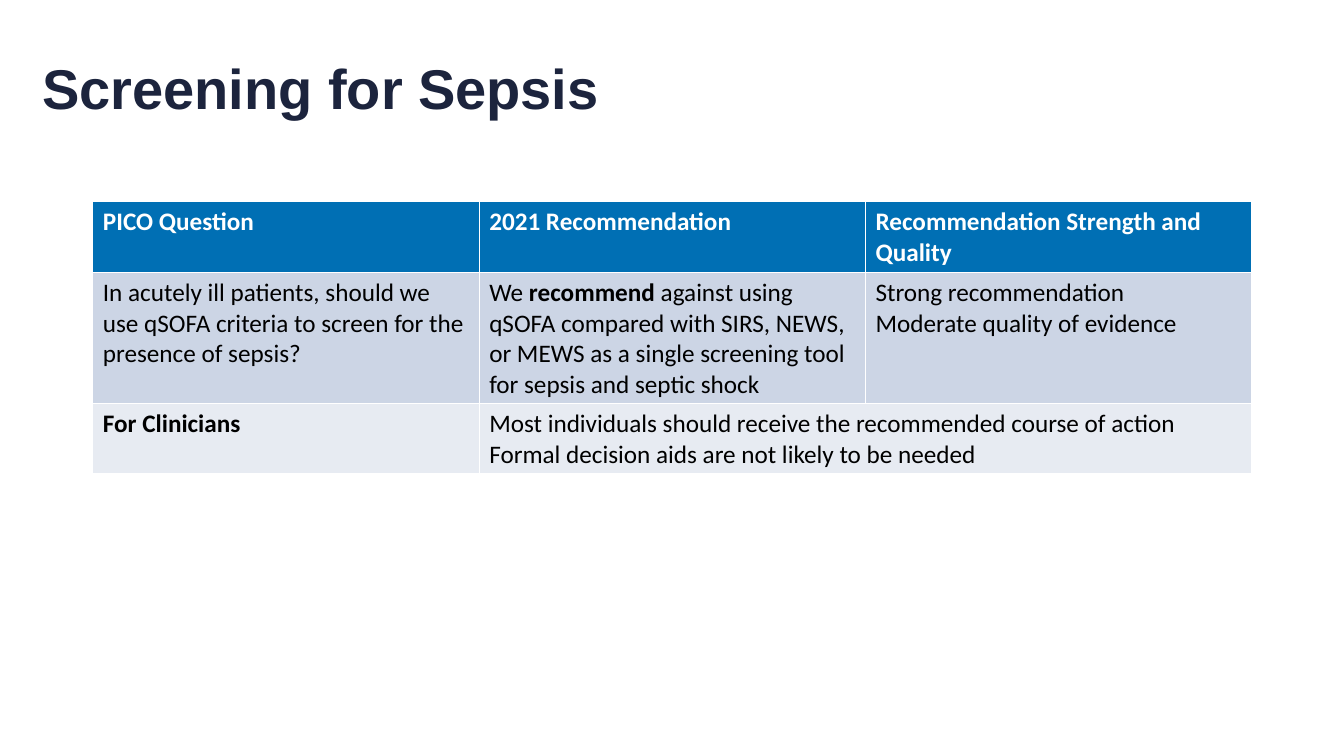
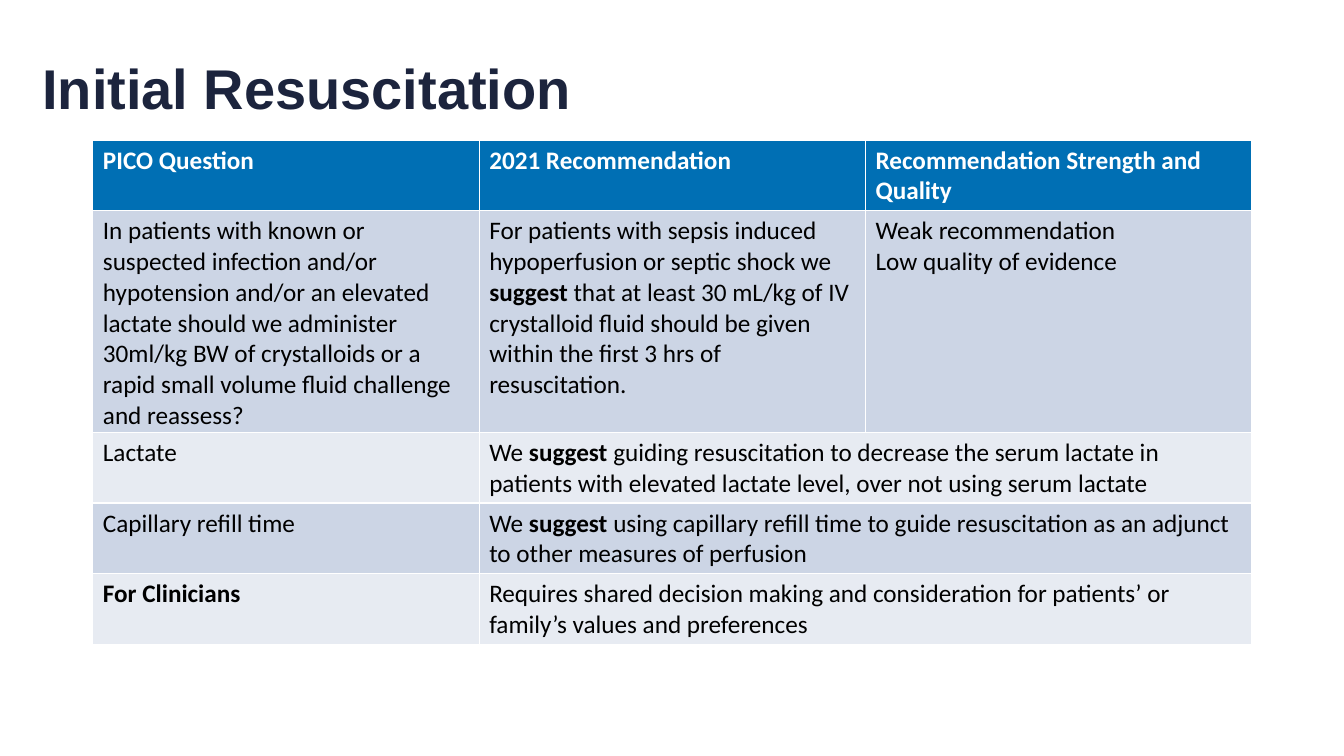
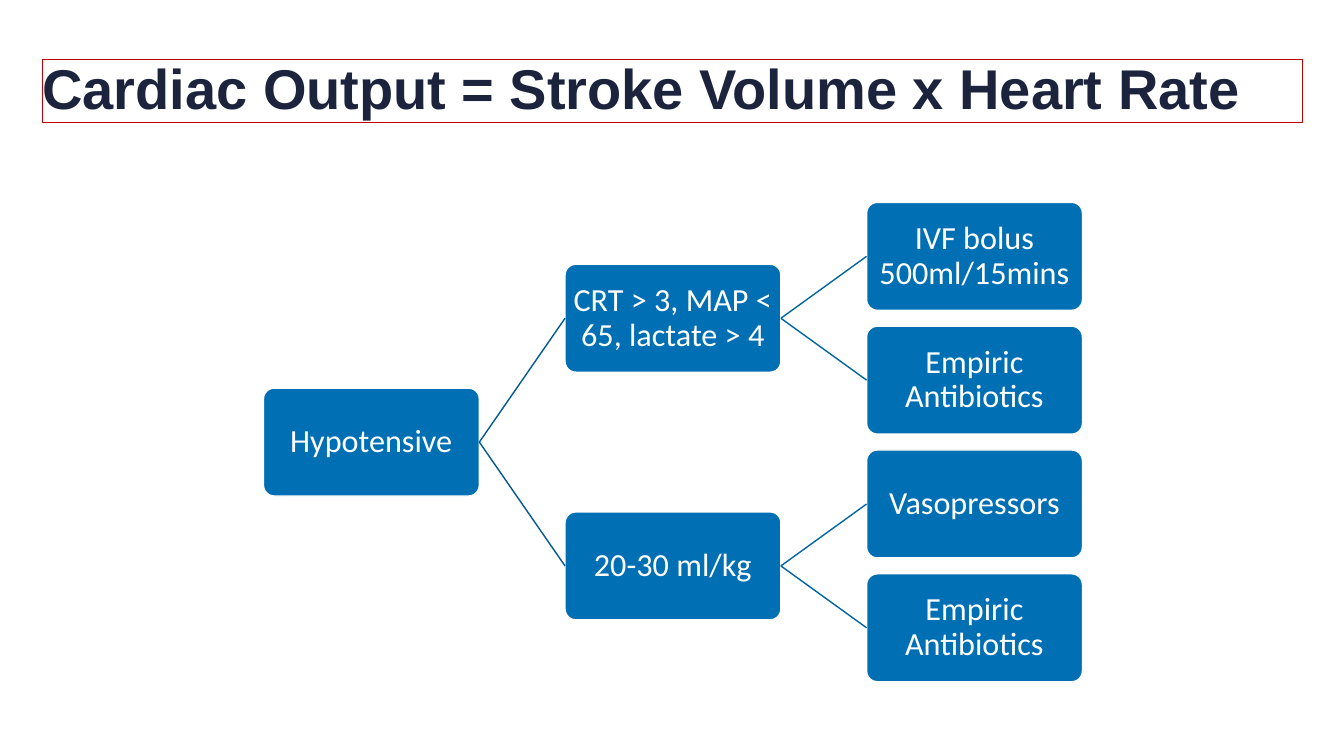
from lxml.etree import SubElement
from pptx import Presentation
from pptx.dml.color import RGBColor
from pptx.enum.shapes import MSO_CONNECTOR, MSO_SHAPE
from pptx.enum.text import MSO_ANCHOR, PP_ALIGN
from pptx.oxml.ns import qn
from pptx.util import Cm, Pt

NAVY, BLUE, WHITE, BLACK, RED = "1C243D", "006FB4", "FFFFFF", "000000", "C00000"
BANDS = ("CCD5E5", "E7EBF2")
BRANCH_COLOURS = ("005990", "0065A3")
TITLE_BOX = (1.07, 1.5, 31.75, 1.6)
TABLE_LEFT, TABLE_WIDTH, ROW_HEIGHT = 2.34, 29.21, 1.03
HEADER = ("PICO Question", "2021 Recommendation", "Recommendation Strength and Quality")

SCREENING = [
    ("In acutely ill patients, should we use qSOFA criteria to screen for the presence of sepsis?",
     "We *recommend* against using qSOFA compared with SIRS, NEWS, or MEWS as a single "
     "screening tool for sepsis and septic shock",
     "Strong recommendation\nModerate quality of evidence"),
    ("*For Clinicians*",
     "Most individuals should receive the recommended course of action\n"
     "Formal decision aids are not likely to be needed"),
]
RESUSCITATION = [
    ("In patients with known or suspected infection and/or hypotension and/or an elevated lactate "
     "should we administer 30ml/kg BW of crystalloids or a rapid small volume fluid challenge "
     "and reassess?",
     "For patients with sepsis induced hypoperfusion or septic shock we *suggest* that at least "
     "30 mL/kg of IV crystalloid fluid should be given within the first 3 hrs of resuscitation.",
     "Weak recommendation\nLow quality of evidence"),
    ("Lactate",
     "We *suggest* guiding resuscitation to decrease the serum lactate in patients with elevated "
     "lactate level, over not using serum lactate"),
    ("Capillary refill time",
     "We *suggest* using capillary refill time to guide resuscitation as an adjunct to other "
     "measures of perfusion"),
    ("*For Clinicians*",
     "Requires shared decision making and consideration for patients’ or family’s values "
     "and preferences"),
]
HYPOTENSION = ("Hypotensive", [
    ("CRT > 3, MAP < 65, lactate > 4", [("IVF bolus 500ml/15mins", []), ("Empiric Antibiotics", [])]),
    ("20-30 ml/kg", [("Vasopressors", []), ("Empiric Antibiotics", [])]),
])


def colour(value):
    """Turn a hex string into a colour."""
    return RGBColor.from_string(value)


def style(para, size, ink, name="Calibri", bold=None):
    """Set the font that all runs of a paragraph share."""
    font = para.font
    font.size, font.name, font.bold = Pt(size), name, bold
    font.color.rgb = colour(ink)


def set_insets(frame, inset):
    """Give a text frame equal insets and centre it vertically."""
    frame.word_wrap = True
    frame.vertical_anchor = MSO_ANCHOR.MIDDLE
    frame.margin_left = frame.margin_right = frame.margin_top = frame.margin_bottom = Cm(inset)


def add_page(deck, title, framed=False):
    """Add a blank page with its title."""
    page = deck.slides.add_slide(deck.slide_layouts[6])
    box = page.shapes.add_textbox(*map(Cm, TITLE_BOX))
    if framed:
        box.line.color.rgb = colour(RED)
        box.line.width = Pt(0.75)
    set_insets(box.text_frame, 0)
    para = box.text_frame.paragraphs[0]
    para.text = title
    para.line_spacing = 0.9
    style(para, 40, NAVY, "Arial", True)
    return page


def fill_cell(cell, text, fill, ink, bold=None):
    """Write text into a cell; parts between asterisks are bold."""
    cell.fill.solid()
    cell.fill.fore_color.rgb = colour(fill)
    frame = cell.text_frame
    for index, line in enumerate(text.split("\n")):
        para = frame.add_paragraph() if index else frame.paragraphs[0]
        for order, part in enumerate(line.split("*")):
            if part:
                span = para.add_run()
                span.text = part
                if order % 2:
                    span.font.bold = True
        style(para, 18, ink, bold=bold)


def add_recommendations(page, top, rows):
    """Add a recommendation table; short rows span the last two columns."""
    count = len(rows) + 1
    table = page.shapes.add_table(count, len(HEADER), Cm(TABLE_LEFT), Cm(top),
                                  Cm(TABLE_WIDTH), Cm(ROW_HEIGHT * count)).table
    for column, text in enumerate(HEADER):
        fill_cell(table.cell(0, column), text, BLUE, WHITE, True)
    for number, row in enumerate(rows, 1):
        if len(row) < len(HEADER):
            table.cell(number, 1).merge(table.cell(number, 2))
        for column, text in enumerate(row):
            fill_cell(table.cell(number, column), text, BANDS[(number - 1) % 2], BLACK)


def add_node(page, text, left, top, width, height):
    """Add one rounded box of the tree."""
    box = page.shapes.add_shape(MSO_SHAPE.ROUNDED_RECTANGLE, *map(Cm, (left, top, width, height)))
    box.shadow.inherit = False
    box.adjustments[0] = 0.1
    box.fill.solid()
    box.fill.fore_color.rgb = colour(BLUE)
    box.line.color.rgb = colour(WHITE)
    box.line.width = Pt(1)
    set_insets(box.text_frame, 0.05)
    para = box.text_frame.paragraphs[0]
    para.text = text
    para.alignment = PP_ALIGN.CENTER
    para.line_spacing = 0.9
    style(para, 23, WHITE)
    return box


def add_branch(page, parent, child, ink):
    """Join a parent's right side to a child's left side."""
    line = page.shapes.add_connector(MSO_CONNECTOR.STRAIGHT, 0, 0, 0, 0)
    line.begin_connect(parent, 3)
    line.end_connect(child, 1)
    line.line.color.rgb = colour(ink)
    line.line.width = Pt(1)
    SubElement(line._element.spPr, qn("a:effectLst"))


def count_leaves(node):
    """Count the end boxes below a node."""
    return sum(map(count_leaves, node[1])) or 1


def add_tree(page, node, left, top, level=0):
    """Add a node centred beside its children, and return its box."""
    width, height, column_step, row_step = 5.44, 2.72, 7.6, 3.12
    text, children = node
    middle = top + (count_leaves(node) - 1) * row_step / 2
    box = add_node(page, text, left, middle, width, height)
    for child in children:
        child_box = add_tree(page, child, left + column_step, top, level + 1)
        add_branch(page, box, child_box, BRANCH_COLOURS[level])
        top += count_leaves(child) * row_step
    return box


def main():
    """Build the deck."""
    deck = Presentation()
    deck.slide_width, deck.slide_height = Cm(33.87), Cm(19.05)
    add_recommendations(add_page(deck, "Screening for Sepsis"), 5.08, SCREENING)
    add_recommendations(add_page(deck, "Initial Resuscitation"), 3.53, RESUSCITATION)
    page = add_page(deck, "Cardiac Output = Stroke Volume x Heart Rate", framed=True)
    add_tree(page, HYPOTENSION, 6.64, 5.1)
    deck.save("out.pptx")


if __name__ == "__main__":
    main()
